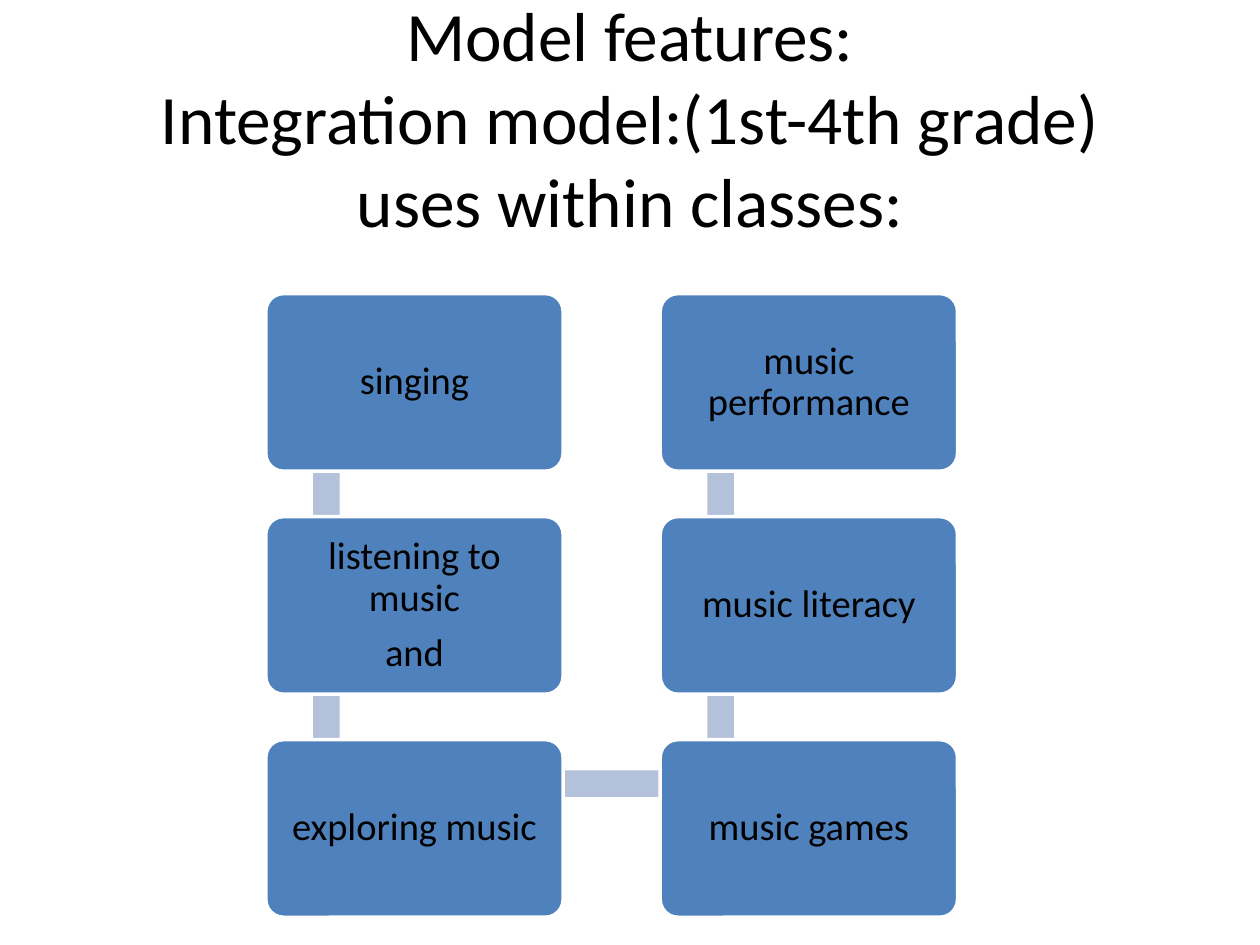
"""Build the slide on the features of the integration model."""
from dataclasses import dataclass

import pptx
import pptx.dml.color
import pptx.enum.shapes
import pptx.enum.text
import pptx.util
from pptx.util import Inches

COLORS = {"box": "4F81BD", "bar": "B3C1DB", "edge": "FFFFFF", "text": "000000"}
FONT = "Calibri"
LEFT, TOP = 2.11, 2.33
BOX_W, BOX_H = 2.36, 1.41
STEP_X, STEP_Y = 3.13, 1.77
BAR_H = 0.21
BAR_DX, BAR_DY = 0.48, 0.35


@dataclass
class Activity:
    """One step of the snaking process."""
    col: int
    row: int
    lines: tuple[str, ...]

    @property
    def left(self) -> float:
        return LEFT + self.col * STEP_X

    @property
    def top(self) -> float:
        return TOP + self.row * STEP_Y


ACTIVITIES = [
    Activity(0, 0, ("singing",)),
    Activity(0, 1, ("listening to music", "and")),
    Activity(0, 2, ("exploring music",)),
    Activity(1, 2, ("music games",)),
    Activity(1, 1, ("music literacy",)),
    Activity(1, 0, ("music performance",)),
]
TITLE = ("Model features:", "Integration model:(1st-4th grade)", "uses within classes:")


def rgb(name: str) -> pptx.dml.color.RGBColor:
    """Look up a palette colour."""
    return pptx.dml.color.RGBColor.from_string(COLORS[name])


def add_run(p, text: str, size: float) -> None:
    """Append a formatted run to a paragraph."""
    r = p.add_run()
    r.text = text
    r.font.name = FONT
    r.font.size = pptx.util.Pt(size)
    r.font.color.rgb = rgb("text")


def add_title(s) -> None:
    """Fill the title placeholder line by line."""
    sp = s.shapes.title
    sp.left, sp.top, sp.width, sp.height = map(Inches, (0.5, 0.3, 9, 1.25))
    tf = sp.text_frame
    tf.auto_size = pptx.enum.text.MSO_AUTO_SIZE.NONE
    tf.vertical_anchor = pptx.enum.text.MSO_ANCHOR.MIDDLE
    p = tf.paragraphs[0]
    p.alignment = pptx.enum.text.PP_ALIGN.CENTER
    for i, line in enumerate(TITLE):
        if i:
            p.add_line_break()
        add_run(p, line, 39.6)


def add_bar(s, start: Activity, end: Activity) -> None:
    """Draw the band that links two neighbouring activities."""
    across = start.row == end.row
    length = STEP_X if across else STEP_Y
    x = (start.left + end.left) / 2 + BAR_DX
    y = (start.top + end.top) / 2 + BAR_DY
    sp = s.shapes.add_shape(
        pptx.enum.shapes.MSO_SHAPE.RECTANGLE,
        Inches(x - length / 2), Inches(y - BAR_H / 2), Inches(length), Inches(BAR_H))
    if not across:
        sp.rotation = 90 if end.row > start.row else 270
    sp.shadow.inherit = False
    sp.fill.solid()
    sp.fill.fore_color.rgb = rgb("bar")
    sp.line.fill.background()


def add_box(s, activity: Activity) -> None:
    """Draw an activity as a rounded box with its text."""
    sp = s.shapes.add_shape(
        pptx.enum.shapes.MSO_SHAPE.ROUNDED_RECTANGLE,
        Inches(activity.left), Inches(activity.top), Inches(BOX_W), Inches(BOX_H))
    sp.adjustments[0] = 0.1
    sp.shadow.inherit = False
    sp.fill.solid()
    sp.fill.fore_color.rgb = rgb("box")
    sp.line.color.rgb = rgb("edge")
    sp.line.width = pptx.util.Pt(2)
    tf = sp.text_frame
    tf.word_wrap = True
    tf.vertical_anchor = pptx.enum.text.MSO_ANCHOR.MIDDLE
    tf.margin_left = tf.margin_right = tf.margin_top = tf.margin_bottom = Inches(0.09)
    for i, line in enumerate(activity.lines):
        p = tf.add_paragraph() if i else tf.paragraphs[0]
        p.alignment = pptx.enum.text.PP_ALIGN.CENTER
        p.line_spacing = 0.9
        p.space_after = pptx.util.Pt(7.7)
        add_run(p, line, 22)


def main() -> None:
    """Create and save the presentation."""
    prs = pptx.Presentation()
    prs.slide_width, prs.slide_height = Inches(10), Inches(7.5)
    s = prs.slides.add_slide(prs.slide_layouts[5])
    add_title(s)
    for start, end in zip(ACTIVITIES, ACTIVITIES[1:]):
        add_bar(s, start, end)
    for activity in ACTIVITIES:
        add_box(s, activity)
    prs.save("out.pptx")


if __name__ == "__main__":
    main()
